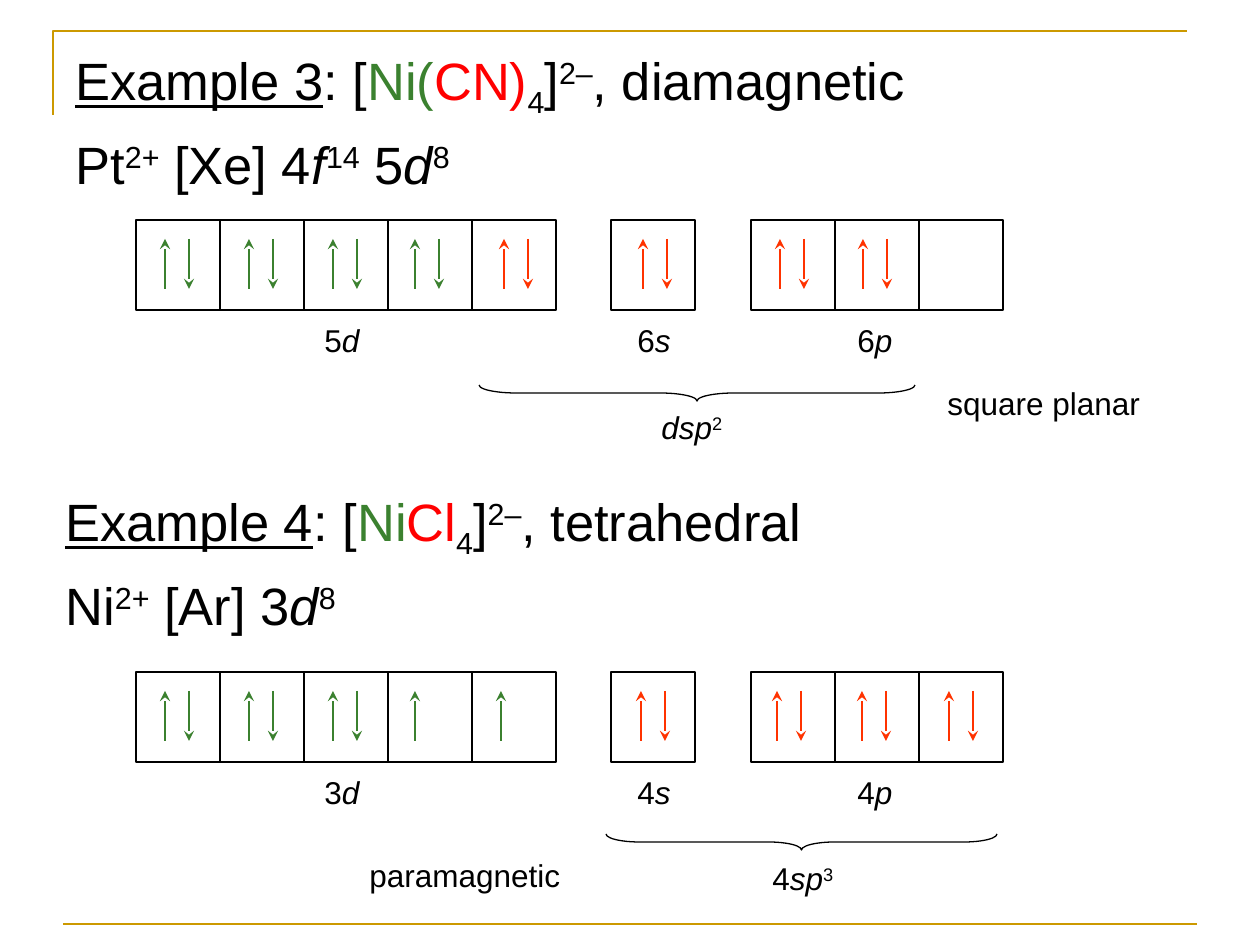
from lxml import etree
from pptx import Presentation
from pptx.dml.color import RGBColor
from pptx.enum.shapes import MSO_CONNECTOR, MSO_SHAPE
from pptx.oxml.ns import qn
from pptx.util import Pt

STRAIGHT = MSO_CONNECTOR.STRAIGHT
RECTANGLE = MSO_SHAPE.RECTANGLE
RIGHT_BRACE = MSO_SHAPE.RIGHT_BRACE

SCALE = 914400 / 126  # EMU per px
BLACK, GOLD = "000000", "CC9900"
GREEN, RED, ORANGE = "3B812F", "FF0000", "FF3300"
ITALIC, UNDERLINE = "italic", "underline"
SUPER, SUB = "30000", "-25000"

CELL_WIDTH, CELL_HEIGHT = 84, 90
ORBITAL_GROUPS = [(136, 5), (611, 1), (751, 3)]  # left edge, cell count
LABEL_LEFTS = [312, 625, 845]
SPIN_GAP = 24


def px(length):
    return round(length * SCALE)


def color(value):
    return RGBColor.from_string(value)


class SlideBuilder:
    font_name = "Arial"
    heading_size = 30
    label_size = 18
    thin = 0.75
    thick = 1.5

    def __init__(self, slide):
        self.slide = slide
        self.shapes = slide.shapes

    def outline(self, shape, line_color, width):
        shape.line.color.rgb = color(line_color)
        shape.line.width = Pt(width)

    def preset(self, kind, left, top, width, height):
        shape = self.shapes.add_shape(kind, px(left), px(top), px(width), px(height))
        shape.shadow.inherit = False
        shape.fill.background()
        self.outline(shape, BLACK, self.thin)
        return shape

    def brace(self, left, top, width, height, curve):
        """A brace lying on its side, with its point downwards."""
        center_x, center_y = left + width / 2, top + height / 2
        shape = self.preset(RIGHT_BRACE, center_x - height / 2,
                            center_y - width / 2, height, width)
        shape.rotation = 90
        shape.adjustments[0] = curve

    def line(self, start, end, line_color, width, arrow=False):
        connector = self.shapes.add_connector(STRAIGHT, *map(px, start + end))
        self.outline(connector, line_color, width)
        properties = connector._element.spPr
        if arrow:
            line_element = properties.find(qn("a:ln"))
            etree.SubElement(line_element, qn("a:tailEnd"), type="stealth")
        etree.SubElement(properties, qn("a:effectLst"))

    def polyline(self, points, line_color, width):
        builder = self.shapes.build_freeform(*points[0], scale=SCALE)
        builder.add_line_segments(points[1:], close=False)
        shape = builder.convert_to_shape()
        shape.shadow.inherit = False
        shape.fill.background()
        self.outline(shape, line_color, width)

    def text(self, left, top, width, height, paragraphs, size, wrap=True):
        """Each paragraph is a list of (text, *styles)."""
        box = self.shapes.add_textbox(px(left), px(top), px(width), px(height))
        frame = box.text_frame
        frame.word_wrap = wrap
        for index, spans in enumerate(paragraphs):
            para = frame.paragraphs[0] if index == 0 else frame.add_paragraph()
            if index:
                para.space_before = Pt(7)
            para.font.name = self.font_name
            para.font.size = Pt(size)
            para.font.color.rgb = color(BLACK)
            for content, *styles in spans:
                self.span(para, content, styles)

    def span(self, para, content, styles):
        run = para.add_run()
        run.text = content
        for style in styles:
            if style == ITALIC:
                run.font.italic = True
            elif style == UNDERLINE:
                run.font.underline = True
            elif style in (SUPER, SUB):
                run._r.get_or_add_rPr().set("baseline", style)
            else:
                run.font.color.rgb = color(style)

    def heading(self, left, top, height, paragraphs):
        self.text(left, top, 1134, height, paragraphs, self.heading_size)

    def label(self, left, top, width, spans, wrap=True):
        self.text(left, top, width, 63, [spans], self.label_size, wrap)

    def spin(self, x, top, spin_color, up=True):
        ends = [(x, top + 69), (x, top + 19)]
        start, end = ends if up else ends[::-1]
        self.line(start, end, spin_color, self.thin, arrow=True)

    def orbitals(self, top, names, green_pairs, green_singles, orange_pairs):
        for left, count in ORBITAL_GROUPS:
            for index in range(count):
                self.preset(RECTANGLE, left + index * CELL_WIDTH, top,
                            CELL_WIDTH, CELL_HEIGHT)
        for left, (shell, subshell) in zip(LABEL_LEFTS, names):
            self.label(left, top + 95, 95, [(shell,), (subshell, ITALIC)])
        for spin_color, pairs in ((GREEN, green_pairs), (ORANGE, orange_pairs)):
            for x in pairs:
                self.spin(x, top, spin_color)
                self.spin(x + SPIN_GAP, top, spin_color, up=False)
        for x in green_singles:
            self.spin(x, top, GREEN)


def main():
    deck = Presentation()
    deck.slide_width, deck.slide_height = px(1260), px(945)
    page = SlideBuilder(deck.slides.add_slide(deck.slide_layouts[6]))

    # Frame lines
    page.polyline([(53, 115), (53, 31), (1187, 31)], GOLD, page.thick)
    page.line((63, 924), (1197, 924), GOLD, page.thick)

    # Example 3: square planar
    page.heading(63, 42, 158, [
        [("Example 3", UNDERLINE), (": [",), ("Ni(", GREEN), ("CN)", RED),
         ("4", SUB), ("]",), ("2–", SUPER), (", diamagnetic",)],
        [("Pt",), ("2+", SUPER), (" [Xe] 4",), ("f", ITALIC), ("14", SUPER),
         (" 5",), ("d", ITALIC), ("8", SUPER)],
    ])
    page.orbitals(220, ["5d", "6s", "6p"], [165, 249, 333, 415], [],
                  [504, 643, 780, 863])
    page.brace(479, 385, 436, 16, 2.31)
    page.label(649, 402, 152, [("dsp", ITALIC), ("2", SUPER)])
    page.label(935, 378, 282, [("square planar",)], wrap=False)

    # Example 4: tetrahedral
    page.heading(53, 483, 168, [
        [("Example 4", UNDERLINE), (": [",), ("Ni", GREEN), ("Cl", RED),
         ("4", SUB), ("]",), ("2–", SUPER), (", tetrahedral",)],
        [("Ni",), ("2+", SUPER), (" [Ar] 3",), ("d", ITALIC), ("8", SUPER)],
    ])
    page.orbitals(672, ["3d", "4s", "4p"], [165, 249, 333], [415, 501],
                  [641, 777, 862, 949])
    page.brace(606, 834, 391, 16, 2.07)
    page.label(760, 853, 158, [("4",), ("sp", ITALIC), ("3", SUPER)])
    page.label(357, 850, 280, [("paramagnetic",)], wrap=False)

    deck.save("out.pptx")


if __name__ == "__main__":
    main()
